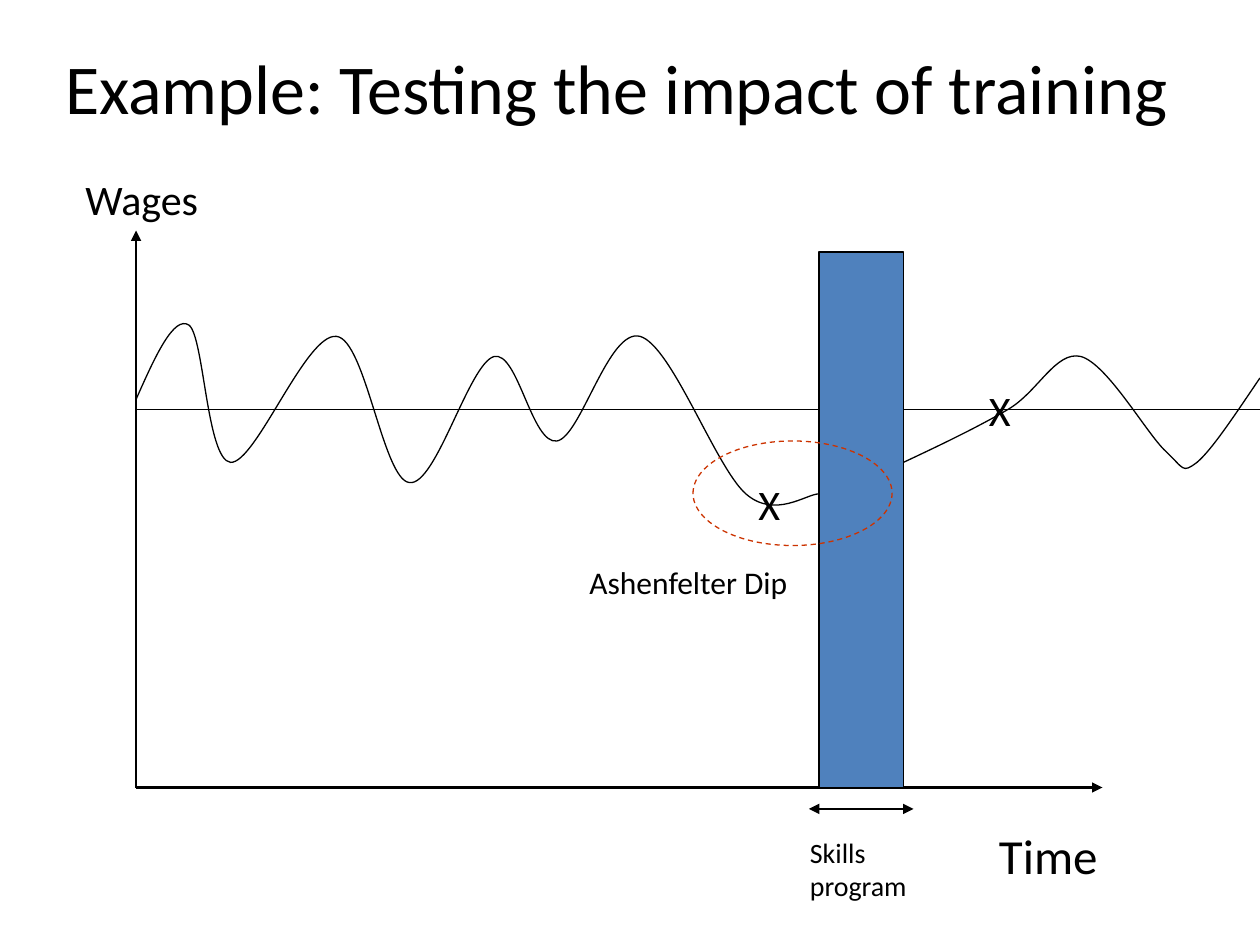
from typing import NamedTuple

from lxml.etree import SubElement
from pptx import Presentation
from pptx.dml.color import RGBColor
from pptx.enum.dml import MSO_LINE_DASH_STYLE as DASH
from pptx.enum.shapes import MSO_CONNECTOR as CONN, MSO_SHAPE as SHAPE
from pptx.enum.text import MSO_ANCHOR as ANCHOR, PP_ALIGN as ALIGN
from pptx.oxml.ns import qn
from pptx.util import Inches, Pt

COLORS = {"ink": "000000", "program": "4F81BD", "dip": "CC3300"}
FONT = "Calibri"
LEFT, BASE, MEAN = 1.08, 6.25, 3.25
BAR_LEFT, BAR_RIGHT, BAR_TOP = 6.5, 7.17, 2


class Label(NamedTuple):
    text: str
    x: float
    y: float
    w: float
    h: float
    size: int
    align: ALIGN = ALIGN.LEFT
    anchor: ANCHOR = ANCHOR.TOP


class Line(NamedTuple):
    x1: float
    y1: float
    x2: float
    y2: float
    width: float = 0.75
    ends: tuple[str, ...] = ()


LABELS = [
    Label("Example: Testing the impact of training ", 0.08, 0.3, 9.75, 0.78, 40,
          ALIGN.CENTER, ANCHOR.MIDDLE),
    Label("Time", 7.83, 6.5, 1.25, 0.57, 28),
    Label("Wages", 0.58, 1.33, 1.33, 0.5, 24),
    Label("Skills program", 6.33, 6.58, 1.33, 0.64, 16),
    Label("X", 7.75, 3, 0.67, 0.5, 24),
    Label("X", 5.92, 3.75, 0.5, 0.5, 24),
    Label("Ashenfelter Dip", 4.58, 4.42, 2.5, 0.4, 18),
]
AXES = [
    Line(LEFT, BASE, 8.75, BASE, 1.5, ("tailEnd",)),
    Line(LEFT, BASE, LEFT, 1.83, 1.5, ("tailEnd",)),
]
GUIDES = [
    Line(6.42, 6.42, 7.25, 6.42, ends=("headEnd", "tailEnd")),
    Line(LEFT, MEAN, BAR_LEFT, MEAN),
    Line(BAR_RIGHT, MEAN, 10, MEAN),
]
WAGES_BEFORE = [
    (LEFT, 3.17),
    (1.23, 2.83), (1.38, 2.5), (1.5, 2.58),
    (1.62, 2.67), (1.64, 3.65), (1.83, 3.67),
    (2.03, 3.68), (2.43, 2.64), (2.67, 2.67),
    (2.9, 2.69), (3.04, 3.81), (3.25, 3.83),
    (3.46, 3.86), (3.72, 2.89), (3.92, 2.83),
    (4.11, 2.78), (4.22, 3.53), (4.42, 3.5),
    (4.61, 3.47), (4.83, 2.6), (5.08, 2.67),
    (5.33, 2.74), (5.68, 3.71), (5.92, 3.92),
    (6.15, 4.12), (6.4, 3.92), (BAR_LEFT, 3.92),
]
WAGES_AFTER = [
    (BAR_RIGHT, 3.67),
    (7.47, 3.53), (7.76, 3.39), (8, MEAN),
    (8.24, 3.11), (8.38, 2.78), (8.58, 2.83),
    (8.79, 2.89), (9.1, 3.44), (9.25, 3.58),
    (9.4, 3.72), (9.38, 3.76), (9.5, 3.67),
    (9.62, 3.57), (9.81, 3.28), (10, 3),
]


def rgb(name: str) -> RGBColor:
    return RGBColor.from_string(COLORS[name])


def style(s, line: str = "ink", fill: str | None = None) -> None:
    s.shadow.inherit = False
    s.line.color.rgb = rgb(line)
    s.line.width = Pt(0.75)
    if fill:
        s.fill.solid()
        s.fill.fore_color.rgb = rgb(fill)
    else:
        s.fill.background()


def add_label(slide, label: Label) -> None:
    s = slide.shapes.add_textbox(*map(Inches, label[1:5]))
    tf = s.text_frame
    tf.word_wrap = True
    tf.vertical_anchor = label.anchor
    p = tf.paragraphs[0]
    p.text = label.text
    p.alignment = label.align
    p.font.name = FONT
    p.font.size = Pt(label.size)
    p.font.color.rgb = rgb("ink")


def add_line(slide, line: Line) -> None:
    s = slide.shapes.add_connector(CONN.STRAIGHT, *map(Inches, line[:4]))
    s.line.color.rgb = rgb("ink")
    s.line.width = Pt(line.width)
    ln = s.line._get_or_add_ln()
    for end in line.ends:
        SubElement(ln, qn(f"a:{end}"), type="triangle")
    SubElement(s._element.spPr, qn("a:effectLst"))


def add_curve(slide, points: list[tuple[float, float]]) -> None:
    start, *rest = [(Inches(x), Inches(y)) for x, y in points]
    builder = slide.shapes.build_freeform(*start)
    builder.add_line_segments(rest, close=False)
    s = builder.convert_to_shape()
    style(s)
    segments = list(s._element.iter(qn("a:lnTo")))
    outline = segments[0].getparent()
    for i in range(0, len(segments), 3):
        bezier = SubElement(outline, qn("a:cubicBezTo"))
        for segment in segments[i:i + 3]:
            bezier.append(segment[0])
            outline.remove(segment)


def add_preset(slide, kind: SHAPE, x: float, y: float, w: float, h: float):
    return slide.shapes.add_shape(kind, *map(Inches, (x, y, w, h)))


def main() -> None:
    prs = Presentation()
    prs.slide_width, prs.slide_height = Inches(10), Inches(7.5)
    slide = prs.slides.add_slide(prs.slide_layouts[6])

    for line in AXES:
        add_line(slide, line)
    bar = add_preset(slide, SHAPE.RECTANGLE, BAR_LEFT, BAR_TOP,
                     BAR_RIGHT - BAR_LEFT, BASE - BAR_TOP)
    style(bar, fill="program")
    for line in GUIDES:
        add_line(slide, line)
    for points in (WAGES_BEFORE, WAGES_AFTER):
        add_curve(slide, points)
    dip = add_preset(slide, SHAPE.OVAL, 5.5, 3.5, 1.58, 0.83)
    style(dip, line="dip")
    dip.line.dash_style = DASH.DASH
    for label in LABELS:
        add_label(slide, label)

    prs.save("out.pptx")


if __name__ == "__main__":
    main()
